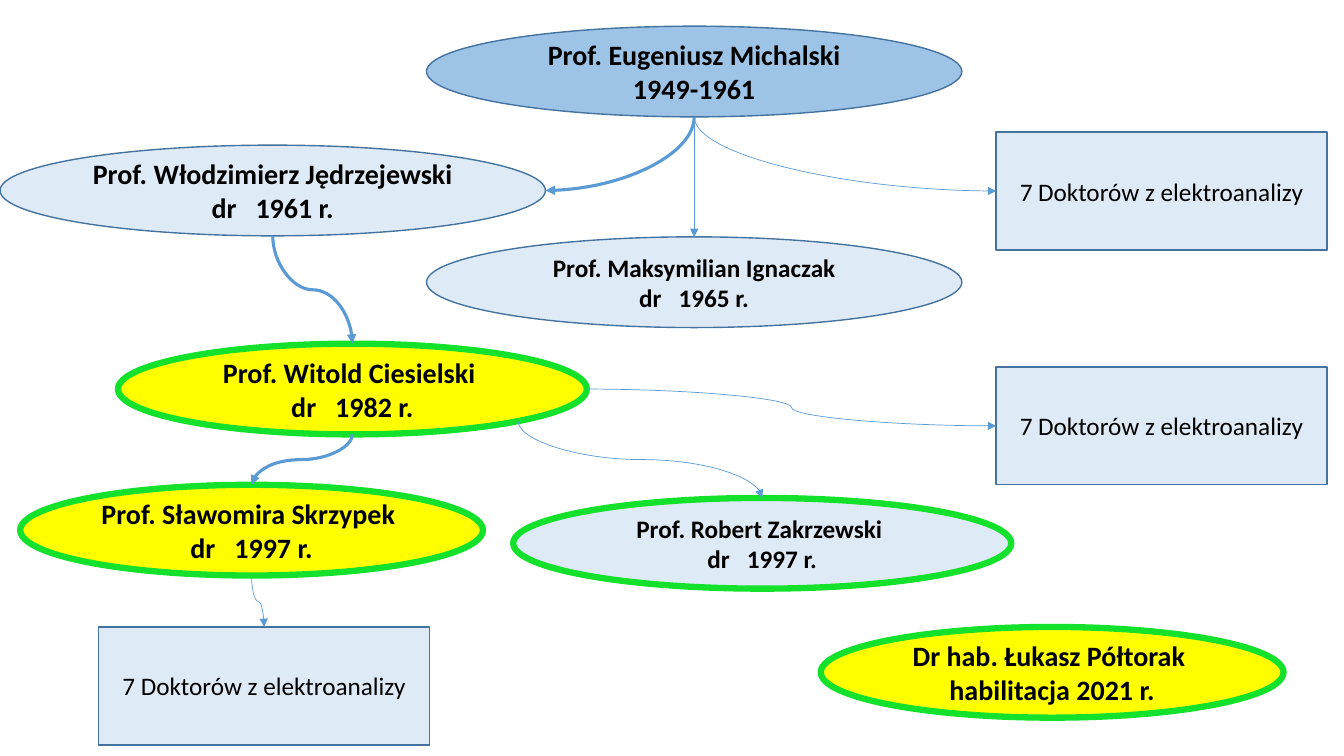
import math

import lxml.etree
import pptx
import pptx.dml.color
import pptx.enum.shapes
import pptx.enum.text
import pptx.oxml.ns
import pptx.util

EMU_PER_PX = 9144  # 100 px to the inch

THEME = {
    "font": "Calibri",
    "text": "000000",
    "founder": "9DC3E6",
    "pale": "DEEBF7",
    "yellow": "FFFF00",
    "outline": "43739E",
    "green": "13E12C",
    "arrow": "5B9BD5",
    "large": 20,
    "small": 18,
    "thin": 1,
    "thick": 4.5,
    "main_arrow": 2.25,
    "side_arrow": 0.5,
}
PLAIN = ("outline", "thin")
HIGHLIGHT = ("green", "thick")

# Fractions of width and height, then the site number on an ellipse and a rectangle
CORNER = (1 + math.sqrt(0.5)) / 2
SITES = {
    "top": (0.5, 0, 0, 0),
    "left": (0, 0.5, 2, 1),
    "bottom": (0.5, 1, 4, 2),
    "right": (1, 0.5, 6, 3),
    "lower right": (CORNER, CORNER, 5, None),
}

# name: left, top, width, fill, outline, type size, lines
PEOPLE = {
    "Michalski": (423, 26, 531, "founder", PLAIN, "large",
                  ["Prof. Eugeniusz Michalski", "1949-1961"]),
    "Jędrzejewski": (0, 144, 541, "pale", PLAIN, "large",
                     ["Prof. Włodzimierz Jędrzejewski", "dr   1961 r."]),
    "Ignaczak": (423, 235, 531, "pale", PLAIN, "small",
                 ["Prof. Maksymilian Ignaczak", "dr   1965 r."]),
    "Ciesielski": (117, 341, 465, "yellow", HIGHLIGHT, "large",
                   ["Prof. Witold Ciesielski ", "dr   1982 r."]),
    "Skrzypek": (20, 481, 459, "yellow", HIGHLIGHT, "large",
                 ["Prof. Sławomira Skrzypek ", "dr   1997 r."]),
    "Zakrzewski": (509, 494, 494, "pale", HIGHLIGHT, "small",
                   ["Prof. Robert Zakrzewski ", "dr   1997 r."]),
    "Półtorak": (814, 622, 459, "yellow", HIGHLIGHT, "large",
                 ["Dr hab. Łukasz Półtorak ", "habilitacja 2021 r."]),
}
PERSON_HEIGHT = 90

# supervisor: left, top of the box with the doctoral students
DOCTORS = {"Michalski": (988, 131), "Ciesielski": (988, 364), "Skrzypek": (98, 622)}
DOCTORS_SIZE = (328, 117)
DOCTORS_TEXT = ["7 Doktorów z elektroanalizy"]

# start, site, end, site, width
ARROWS = [
    ("Michalski", "bottom", "Jędrzejewski", "right", "main_arrow"),
    ("Michalski", "bottom", "Ignaczak", "top", "side_arrow"),
    ("Michalski", "bottom", "Doctors of Michalski", "left", "side_arrow"),
    ("Jędrzejewski", "bottom", "Ciesielski", "top", "main_arrow"),
    ("Ciesielski", "bottom", "Skrzypek", "top", "main_arrow"),
    ("Ciesielski", "lower right", "Zakrzewski", "top", "side_arrow"),
    ("Ciesielski", "right", "Doctors of Ciesielski", "left", "side_arrow"),
    ("Skrzypek", "bottom", "Doctors of Skrzypek", "top", "side_arrow"),
]


def color(name):
    return pptx.dml.color.RGBColor.from_string(THEME[name])


def add_node(kind, box, fill, outline, size, lines, bold):
    """Add a filled shape with one centred paragraph for each line."""
    shape = slide.shapes.add_shape(kind, *(length * EMU_PER_PX for length in box))
    shape.shadow.inherit = False
    shape.fill.solid()
    shape.fill.fore_color.rgb = color(fill)
    shape.line.color.rgb = color(outline[0])
    shape.line.width = pptx.util.Pt(THEME[outline[1]])
    frame = shape.text_frame
    frame.word_wrap = True
    frame.vertical_anchor = pptx.enum.text.MSO_ANCHOR.MIDDLE
    font_format = {"name": THEME["font"], "size": pptx.util.Pt(THEME[size]), "bold": bold}
    for index, line in enumerate(lines):
        paragraph = frame.add_paragraph() if index else frame.paragraphs[0]
        paragraph.alignment = pptx.enum.text.PP_ALIGN.CENTER
        run = paragraph.add_run()
        run.text = line
        run.font.color.rgb = color("text")
        for attribute, value in font_format.items():
            setattr(run.font, attribute, value)
    return shape


presentation = pptx.Presentation()
presentation.slide_width = 1333 * EMU_PER_PX
presentation.slide_height = 750 * EMU_PER_PX
slide = presentation.slides.add_slide(presentation.slide_layouts[6])

qn = pptx.oxml.ns.qn
shape_types = pptx.enum.shapes.MSO_SHAPE
nodes = {}
for name, (left, top, width, fill, outline, size, lines) in PEOPLE.items():
    box = (left, top, width, PERSON_HEIGHT)
    nodes[name] = add_node(shape_types.OVAL, box, fill, outline, size, lines, True)
for name, corner in DOCTORS.items():
    nodes[f"Doctors of {name}"] = add_node(
        shape_types.RECTANGLE, corner + DOCTORS_SIZE, "pale", PLAIN, "small", DOCTORS_TEXT, False)

for start, start_site, end, end_site, width in ARROWS:
    points, joints = [], []
    for tag, name, site in (("a:stCxn", start, start_site), ("a:endCxn", end, end_site)):
        shape = nodes[name]
        across, down, ellipse_site, rectangle_site = SITES[site]
        points.append((round(shape.left + across * shape.width),
                       round(shape.top + down * shape.height)))
        is_ellipse = shape.auto_shape_type == shape_types.OVAL
        joints.append((tag, shape.shape_id, ellipse_site if is_ellipse else rectangle_site))
    (x1, y1), (x2, y2) = points

    # A curve that leaves downwards is a sideways curve turned about its centre
    turned = start_site != "right"
    if turned:
        center_x, center_y = (x1 + x2) // 2, (y1 + y2) // 2
        half_width, half_height = abs(y2 - y1) // 2, abs(x2 - x1) // 2
        ends = (center_x - half_width, center_y - half_height,
                center_x + half_width, center_y + half_height)
    else:
        ends = (x1, y1, x2, y2)
    connector = slide.shapes.add_connector(pptx.enum.shapes.MSO_CONNECTOR.CURVE, *ends)
    connector.line.color.rgb = color("arrow")
    connector.line.width = pptx.util.Pt(THEME[width])

    properties = connector.element.spPr
    if turned:
        transform = properties.find(qn("a:xfrm"))
        transform.set("rot", str((270 if x2 > x1 else 90) * 60000))
        if x2 > x1:
            transform.set("flipH", "1")
    if turned and end_site in ("left", "right"):
        properties.find(qn("a:prstGeom")).set("prst", "curvedConnector2")
    lxml.etree.SubElement(properties.find(qn("a:ln")), qn("a:tailEnd"), type="triangle")
    lxml.etree.SubElement(properties, qn("a:effectLst"))
    joint_list = next(connector.element.iter(qn("p:cNvCxnSpPr")))
    for tag, shape_id, site_number in joints:
        lxml.etree.SubElement(joint_list, qn(tag), id=str(shape_id), idx=str(site_number))

presentation.save("out.pptx")
